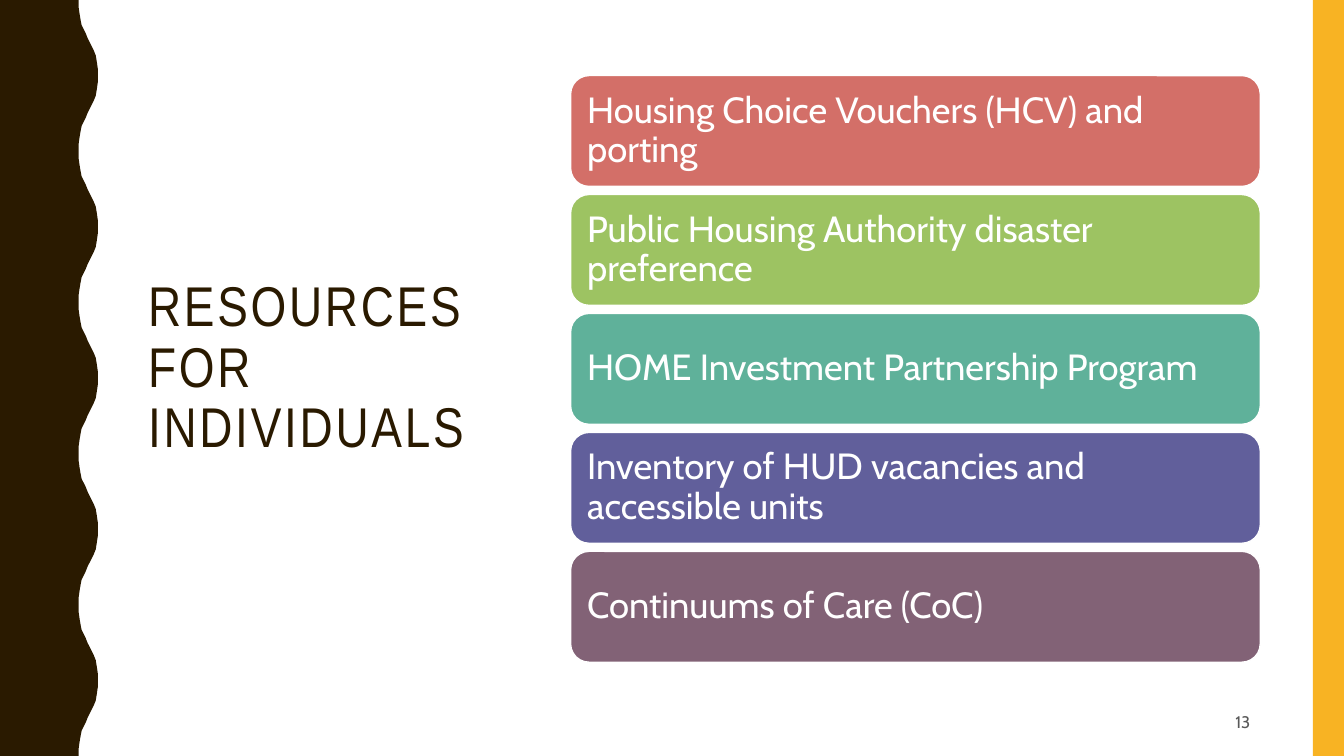
from dataclasses import dataclass

from pptx import Presentation
from pptx import util as u
from pptx.dml.color import RGBColor
from pptx.enum import shapes, text


@dataclass(frozen=True)
class Theme:
    dark: str = "2A1A00"
    accent: str = "F8B323"
    light: str = "FFFFFF"
    muted: str = "595959"
    cards: tuple = ("D36F68", "9DC362", "5FB19A", "615F9B", "826276")
    title_font: str = "Arial Narrow"
    body_font: str = "Cabin"
    title_size: int = 40
    card_size: int = 26
    number_size: int = 12


THEME = Theme()
SLIDE_WIDTH, SLIDE_HEIGHT = 13.33, 7.5
RESOURCES = (
    "Housing Choice Vouchers (HCV) and porting",
    "Public Housing Authority disaster preference",
    "HOME Investment Partnership Program",
    "Inventory of HUD vacancies and accessible units",
    "Continuums of Care (CoC)",
)
WAVE_PERIOD = 1.5
# Depth and drop of the edge from a trough to the next crest
HALF_WAVE = (
    (0, 0), (0, 0.07), (0.01, 0.14), (0.02, 0.2), (0.03, 0.25),
    (0.05, 0.29), (0.07, 0.33), (0.09, 0.38), (0.11, 0.42), (0.13, 0.46),
    (0.15, 0.5), (0.17, 0.55), (0.18, 0.61), (0.19, 0.68), (0.19, 0.75),
)


def paint(shape, fill, line=None):
    shape.shadow.inherit = False
    shape.fill.solid()
    shape.fill.fore_color.rgb = RGBColor.from_string(fill)
    if line:
        shape.line.color.rgb = RGBColor.from_string(line)
        shape.line.width = u.Pt(1)
    else:
        shape.line.fill.background()


def write(shape, words, font, size, color, align=text.PP_ALIGN.LEFT):
    """Fill the shape with one vertically centred paragraph and return it."""
    frame = shape.text_frame
    frame.word_wrap = True
    frame.vertical_anchor = text.MSO_ANCHOR.MIDDLE
    paragraph = frame.paragraphs[0]
    paragraph.text = words
    paragraph.alignment = align
    paragraph.font.name = font
    paragraph.font.size = u.Pt(size)
    paragraph.font.color.rgb = RGBColor.from_string(color)
    return paragraph


def add_wavy_band(slide, left, top, width, height):
    """Draw a band whose right edge swings between width and its crests."""
    mirrored = [(depth, WAVE_PERIOD - drop) for depth, drop in HALF_WAVE[-2::-1]]
    period = list(HALF_WAVE) + mirrored
    edge = [
        (left + width + depth, top + wave * WAVE_PERIOD + drop)
        for wave in range(round(height / WAVE_PERIOD))
        for depth, drop in period
    ]
    points = [(u.Inches(x), u.Inches(y)) for x, y in edge + [(left, top + height)]]
    builder = slide.shapes.build_freeform(u.Inches(left), u.Inches(top))
    builder.add_line_segments(points, close=True)
    paint(builder.convert_to_shape(), THEME.dark)


def add_side_bar(slide, *box):
    bar = slide.shapes.add_shape(shapes.MSO_SHAPE.RECTANGLE, *map(u.Inches, box))
    paint(bar, THEME.accent)


def add_title(slide, words, *box):
    title = slide.shapes.add_textbox(*map(u.Inches, box))
    paragraph = write(title, words, THEME.title_font, THEME.title_size, THEME.dark)
    paragraph.line_spacing = 0.9
    paragraph.runs[0].font._element.set("spc", "200")


def add_resource_cards(slide, resources, left, top, width, height, gap=0.08):
    """Stack equal rounded cards that fill the box."""
    card_height = (height - gap * (len(resources) - 1)) / len(resources)
    for index, (words, color) in enumerate(zip(resources, THEME.cards)):
        card_top = top + index * (card_height + gap)
        card = slide.shapes.add_shape(
            shapes.MSO_SHAPE.ROUNDED_RECTANGLE,
            *map(u.Inches, (left, card_top, width, card_height)))
        paint(card, color, THEME.light)
        frame = card.text_frame
        frame.margin_left = frame.margin_right = u.Inches(0.11)
        frame.margin_top = frame.margin_bottom = u.Inches(0.11)
        paragraph = write(card, words, THEME.body_font, THEME.card_size, THEME.light)
        paragraph.line_spacing = 0.9


def add_slide_number(slide, number, *box):
    label = slide.shapes.add_textbox(*map(u.Inches, box))
    write(label, str(number), THEME.body_font, THEME.number_size, THEME.muted,
          text.PP_ALIGN.RIGHT)


def main():
    presentation = Presentation()
    presentation.slide_width = u.Inches(SLIDE_WIDTH)
    presentation.slide_height = u.Inches(SLIDE_HEIGHT)
    slide = presentation.slides.add_slide(presentation.slide_layouts[6])
    add_wavy_band(slide, 0, 0, 0.78, SLIDE_HEIGHT)
    add_side_bar(slide, 13.02, 0, 0.31, SLIDE_HEIGHT)
    add_title(slide, "RESOURCES FOR INDIVIDUALS", 1.37, 0.7, 3.7, 5.92)
    add_resource_cards(slide, RESOURCES, 5.66, 0.75, 6.84, 5.82)
    add_slide_number(slide, 13, 9.42, 6.97, 3.08, 0.38)
    presentation.save("out.pptx")


if __name__ == "__main__":
    main()
